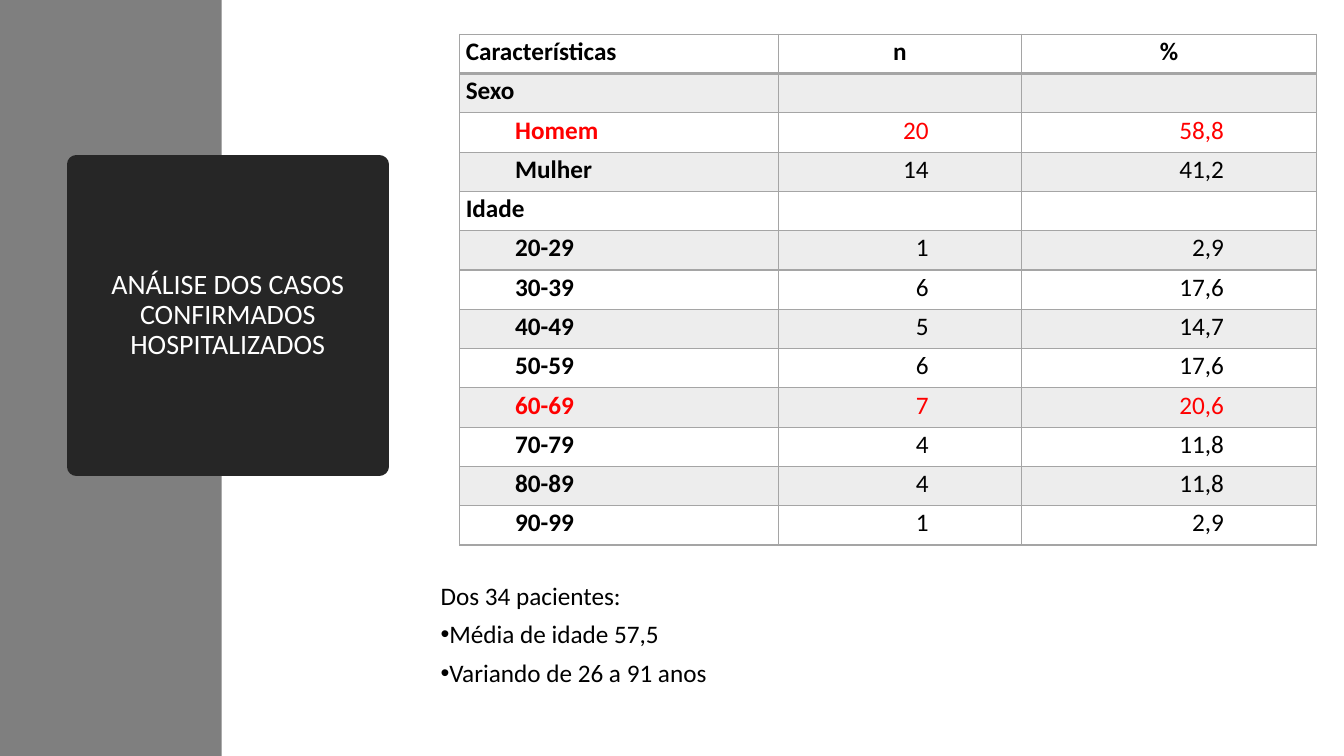
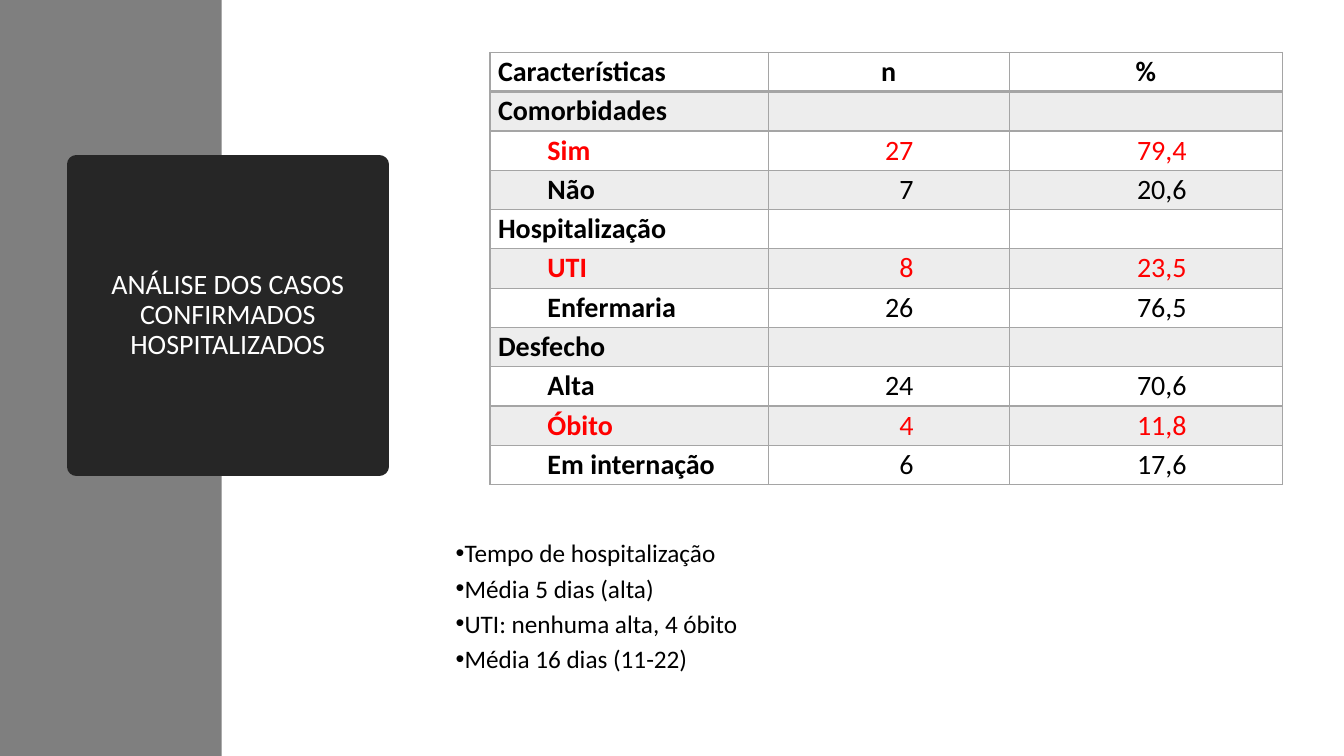
"""Build two slides that summarise the confirmed hospitalised cases."""
from lxml.etree import SubElement
from pptx import Presentation
from pptx.dml.color import RGBColor
from pptx.enum.shapes import MSO_SHAPE
from pptx.enum.text import MSO_ANCHOR, MSO_AUTO_SIZE, PP_ALIGN
from pptx.oxml.ns import qn
from pptx.util import Inches, Pt

COLORS = {
    "band": "7F7F7F", "box": "262626", "title": "FFFFFF", "text": "000000",
    "accent": "FF0000", "border": "A5A5A5", "even": "FFFFFF", "odd": "EDEDED",
}
FONT = "Calibri"
TITLE = "ANÁLISE DOS CASOS CONFIRMADOS HOSPITALIZADOS"
ROW_HEIGHT = 0.39
LABEL_INDENT = 0.49

SEX_AND_AGE = [
    ("Características", "n", "%"),
    ("Sexo",),
    ("Homem", "20", "58,8"),
    ("Mulher", "14", "41,2"),
    ("Idade",),
    ("20-29", "1", "2,9"),
    ("30-39", "6", "17,6"),
    ("40-49", "5", "14,7"),
    ("50-59", "6", "17,6"),
    ("60-69", "7", "20,6"),
    ("70-79", "4", "11,8"),
    ("80-89", "4", "11,8"),
    ("90-99", "1", "2,9"),
]
CLINICAL = [
    ("Características", "n", "%"),
    ("Comorbidades",),
    ("Sim", "27", "79,4"),
    ("Não", "7", "20,6"),
    ("Hospitalização",),
    ("UTI", "8", "23,5"),
    ("Enfermaria", "26", "76,5"),
    ("Desfecho",),
    ("Alta", "24", "70,6"),
    ("Óbito", "4", "11,8"),
    ("Em internação", "6", "17,6"),
]


def rgb(name):
    return RGBColor.from_string(COLORS[name])


def place(sp, left, top, width, height):
    sp.left, sp.top = Inches(left), Inches(top)
    sp.width, sp.height = Inches(width), Inches(height)


class Deck:
    """Hold the shared style and the current slide."""

    def __init__(self):
        self.prs = Presentation()
        self.prs.slide_width = Inches(13.33)
        self.prs.slide_height = Inches(7.5)
        self.slide = None

    def new_slide(self):
        self.slide = self.prs.slides.add_slide(self.prs.slide_layouts[1])
        self.band()
        self.title()

    def style(self, p, size, color="text", bold=False, spacing=0.9):
        p.font.name, p.font.size, p.font.bold = FONT, Pt(size), bold
        p.font.color.rgb = rgb(color)
        p.line_spacing = spacing

    def band(self):
        sp = self.slide.shapes.add_shape(
            MSO_SHAPE.RECTANGLE, 0, 0, Inches(2.2), self.prs.slide_height)
        sp.shadow.inherit = False
        sp.fill.solid()
        sp.fill.fore_color.rgb = rgb("band")
        sp.line.fill.background()
        sp.element.getparent().insert(2, sp.element)

    def title(self):
        sp = self.slide.shapes.title
        place(sp, 0.76, 1.63, 3, 3)
        sp.fill.solid()
        sp.fill.fore_color.rgb = rgb("box")
        sp.line.color.rgb = rgb("box")
        sp.line.width = Pt(13.75)
        tf = sp.text_frame
        tf.text = TITLE
        tf.auto_size = MSO_AUTO_SIZE.NONE
        tf.vertical_anchor = MSO_ANCHOR.MIDDLE
        p = tf.paragraphs[0]
        p.alignment = PP_ALIGN.CENTER
        self.style(p, 20, "title")

    def bullets(self, left, top, items, spacing, intro=None):
        sp = self.slide.placeholders[1]
        place(sp, left, top, 7.86, 1.41)
        tf = sp.text_frame
        tf.text = "\n".join(([intro] if intro else []) + items)
        tf.auto_size = MSO_AUTO_SIZE.NONE
        tf.vertical_anchor = MSO_ANCHOR.TOP
        for p in tf.paragraphs:
            p.space_before, p.space_after = Pt(0), Pt(8)
            self.style(p, 18, spacing=spacing)
            bulleted = p.text != intro
            pPr = p._p.get_or_add_pPr()
            pPr.set("marL", "0")
            pPr.set("indent", str(Inches(-0.25) if bulleted else 0))
            bullet = pPr.makeelement(qn("a:buChar" if bulleted else "a:buNone"))
            if bulleted:
                bullet.set("char", "•")
            pPr.find(qn("a:defRPr")).addprevious(bullet)

    def borders(self, cell, header):
        tcPr = cell._tc.get_or_add_tcPr()
        for side in "LRTB":
            width = Pt(2 if header and side == "B" else 1)
            ln = SubElement(tcPr, qn(f"a:ln{side}"), w=str(width))
            fill = SubElement(ln, qn("a:solidFill"))
            SubElement(fill, qn("a:srgbClr"), val=COLORS["border"])

    def cell(self, cell, text, row, col, size, inset, right, group, color):
        header = row == 0
        value = col > 0 and not header
        cell.margin_top = cell.margin_bottom = 0
        cell.margin_left = Inches(inset)
        cell.margin_right = Inches(right if value else inset)
        self.borders(cell, header)
        cell.fill.solid()
        cell.fill.fore_color.rgb = rgb("odd" if row % 2 else "even")
        p = cell.text_frame.paragraphs[0]
        p.text = text
        self.style(p, size, color, bold=not value, spacing=1.07)
        if value:
            p.alignment = PP_ALIGN.RIGHT
        elif col:
            p.alignment = PP_ALIGN.CENTER
        elif not header and not group:
            p._p.get_or_add_pPr().set("indent", str(Inches(LABEL_INDENT)))

    def table(self, left, top, widths, rows, size, inset, right, accents):
        table = self.slide.shapes.add_table(
            len(rows), len(widths), Inches(left), Inches(top),
            Inches(sum(widths)), Inches(ROW_HEIGHT * len(rows))).table
        table.first_row = table.horz_banding = False
        for column, width in zip(table.columns, widths):
            column.width = Inches(width)
        for r, values in enumerate(rows):
            table.rows[r].height = Inches(ROW_HEIGHT)
            group = len(values) == 1
            color = "accent" if values[0] in accents else "text"
            for c in range(len(widths)):
                text = values[c] if c < len(values) else ""
                self.cell(table.cell(r, c), text, r, c, size, inset, right,
                          group, color)


def main():
    deck = Deck()

    deck.new_slide()
    deck.bullets(4.27, 5.74,
                 ["Média de idade 57,5", "Variando de 26 a 91 anos"],
                 0.9, intro="Dos 34 pacientes:")
    deck.table(4.56, 0.34, [3.16, 2.41, 2.93], SEX_AND_AGE, 18, 0.06, 0.92,
               {"Homem", "60-69"})

    deck.new_slide()
    deck.bullets(4.42, 5.34,
                 ["Tempo de hospitalização", "Média 5 dias (alta)",
                  "UTI: nenhuma alta, 4 óbito", "Média 16 dias (11-22)"],
                 0.8)
    deck.table(4.86, 0.52, [2.76, 2.39, 2.71], CLINICAL, 20, 0.08, 0.95,
               {"Sim", "UTI", "Óbito"})

    deck.prs.save("out.pptx")


if __name__ == "__main__":
    main()
